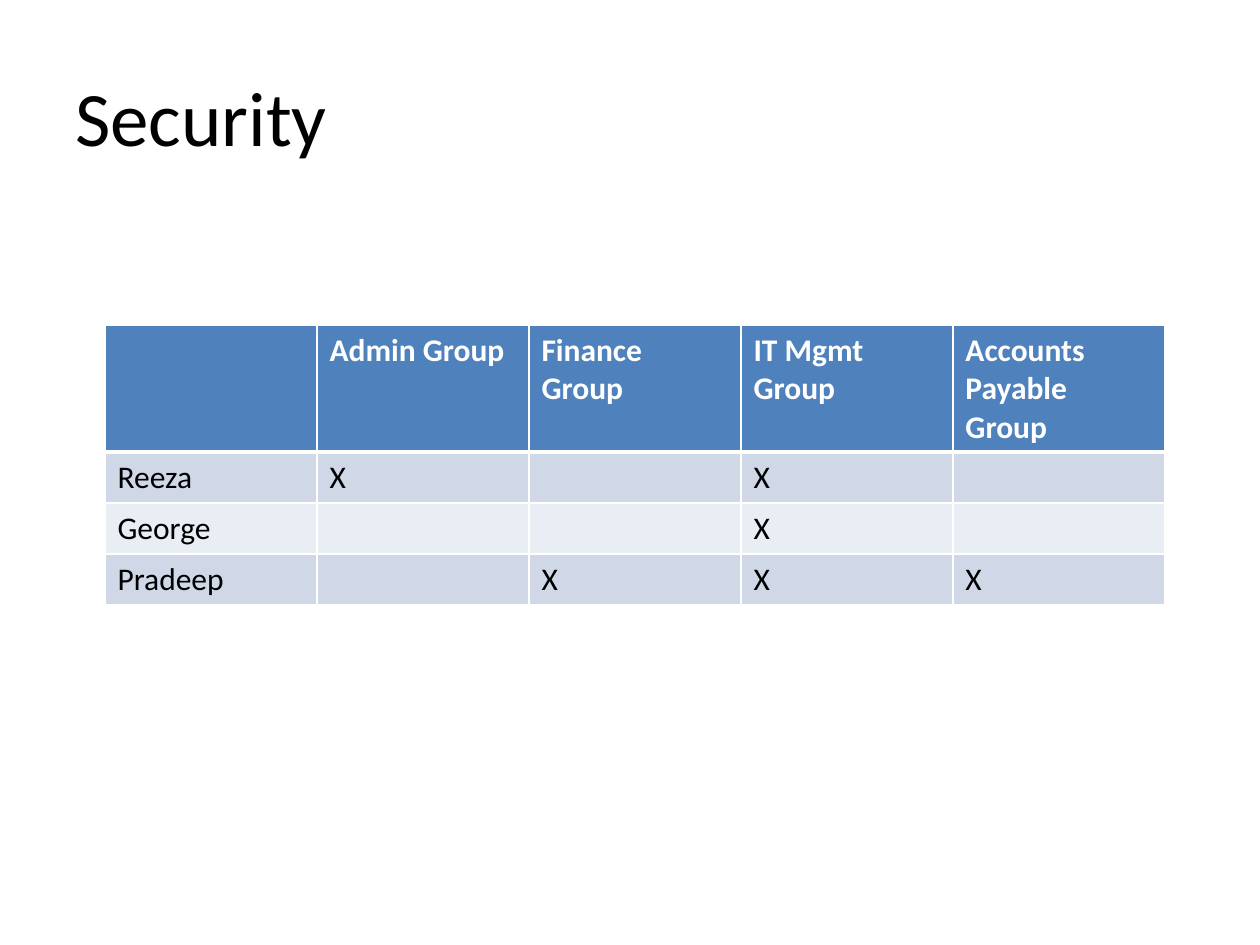
from dataclasses import dataclass

from lxml import etree
from pptx import Presentation
from pptx import util as u
from pptx.dml.color import RGBColor
from pptx.enum import text
from pptx.oxml.ns import qn

# Content
TITLE = "Security"
GROUPS = ["Admin Group", "Finance Group", "IT Mgmt Group", "Accounts Payable Group"]
MEMBERS = {
    "Reeza": ["Admin Group", "IT Mgmt Group"],
    "George": ["IT Mgmt Group"],
    "Pradeep": ["Finance Group", "IT Mgmt Group", "Accounts Payable Group"],
}


@dataclass(frozen=True)
class Theme:
    font: str = "Calibri"
    title_size: int = 44
    table_size: int = 18
    ink: str = "000000"
    white: str = "FFFFFF"
    header: str = "4F81BD"
    bands: tuple = ("D0D8E8", "E9EDF4")
    rule: int = 1
    header_rule: int = 3


T = Theme()

# Geometry in px
DPI = 126
SLIDE_W, SLIDE_H = 1260, 945
TITLE_BOX = (63, 63, 1134, 105)
TABLE_X, TABLE_Y = 105, 325
COL_W, HEADER_H, ROW_H = 212, 127, 51


def px(n):
    return u.Emu(round(n * 914400 / DPI))


def style(p, size, color, bold=False):
    p.font.name, p.font.size, p.font.bold = T.font, u.Pt(size), bold
    p.font.color.rgb = RGBColor.from_string(color)


def border(cell, side, width):
    ln = etree.SubElement(cell._tc.get_or_add_tcPr(), qn(f"a:ln{side}"), w=str(u.Pt(width)))
    fill = etree.SubElement(ln, qn("a:solidFill"))
    etree.SubElement(fill, qn("a:srgbClr"), val=T.white)


prs = Presentation()
prs.slide_width, prs.slide_height = px(SLIDE_W), px(SLIDE_H)
s = prs.slides.add_slide(prs.slide_layouts[6])

# Title
tf = s.shapes.add_textbox(*map(px, TITLE_BOX)).text_frame
tf.word_wrap = True
tf.vertical_anchor = text.MSO_ANCHOR.MIDDLE
tf.text = TITLE
style(tf.paragraphs[0], T.title_size, T.ink)

# Membership table
rows = [["", *GROUPS]]
rows += [[name, *("X" if g in joined else "" for g in GROUPS)] for name, joined in MEMBERS.items()]
heights = [HEADER_H] + [ROW_H] * len(MEMBERS)
table = s.shapes.add_table(
    len(rows), len(rows[0]), px(TABLE_X), px(TABLE_Y), px(COL_W * len(rows[0])), px(sum(heights))
).table
for col in table.columns:
    col.width = px(COL_W)

for i, values in enumerate(rows):
    table.rows[i].height = px(heights[i])
    is_header = i == 0
    fill = T.header if is_header else T.bands[(i - 1) % 2]
    for j, value in enumerate(values):
        cell = table.cell(i, j)
        for side in "LRTB":
            under_header = (i, side) in ((0, "B"), (1, "T"))
            border(cell, side, T.header_rule if under_header else T.rule)
        cell.fill.solid()
        cell.fill.fore_color.rgb = RGBColor.from_string(fill)
        cell.text = value
        style(cell.text_frame.paragraphs[0], T.table_size, T.white if is_header else T.ink, is_header)

prs.save("out.pptx")
